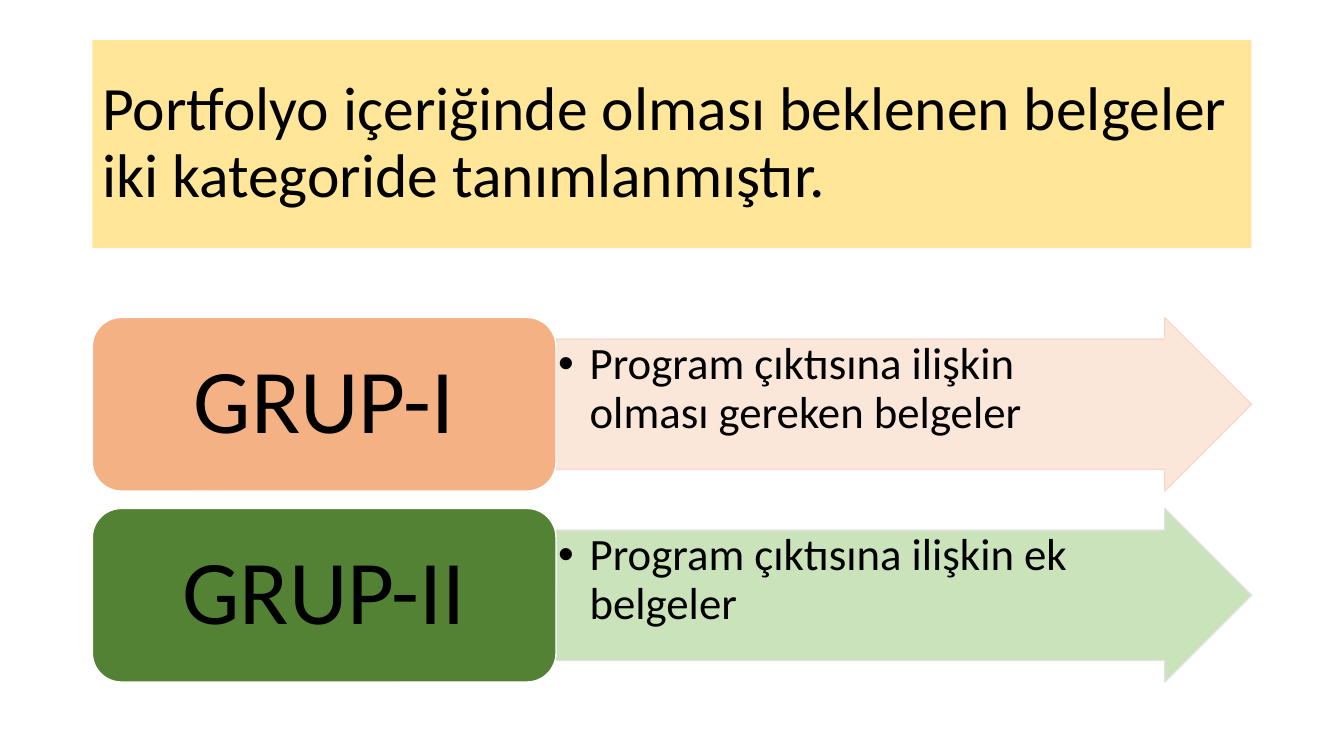
"""Build a slide that presents the two categories of portfolio documents."""
from lxml import etree
from pptx import Presentation
from pptx import util as u
from pptx.dml.color import RGBColor
from pptx.enum import shapes, text
from pptx.oxml.ns import qn

COLORS = {
    "text": "000000", "title": "FFE699", "outline": "FFFFFF",
    "orange": "F4B183", "orange_pale": "FBE5D6", "orange_line": "F8D7CE",
    "green": "548235", "green_pale": "C5E0B4", "green_line": "E1E1E1",
}
LEFT, WIDTH = 66, 828
LABEL_WIDTH = WIDTH * 0.4
ROW_TOP, ROW_HEIGHT = 226.8, 124
ROW_PITCH = ROW_HEIGHT * 1.1
GROUPS = [
    ("GRUP-I", "Program çıktısına ilişkin olması gereken belgeler", "orange"),
    ("GRUP-II", "Program çıktısına ilişkin ek belgeler", "green"),
]


def add_box(kind, box, fill, line, wording, size, insets):
    """Add a filled shape with left-aligned text and return it."""
    shape = slide.shapes.add_shape(kind, *[u.Pt(length) for length in box])
    shape.shadow.inherit = False
    shape.fill.solid()
    shape.fill.fore_color.rgb = RGBColor.from_string(COLORS[fill])
    if line:
        shape.line.color.rgb = RGBColor.from_string(COLORS[line])
        shape.line.width = u.Pt(1)
    else:
        shape.line.fill.background()
    frame = shape.text_frame
    frame.word_wrap = True
    frame.vertical_anchor = text.MSO_ANCHOR.MIDDLE
    frame.margin_left, frame.margin_top, frame.margin_right, frame.margin_bottom = [
        u.Pt(inset) for inset in insets]
    frame.text = wording
    paragraph = frame.paragraphs[0]
    paragraph.alignment = text.PP_ALIGN.LEFT
    paragraph.line_spacing = 0.9
    font = paragraph.runs[0].font
    font.name = "Calibri"
    font.size = u.Pt(size)
    font.color.rgb = RGBColor.from_string(COLORS["text"])
    return shape


presentation = Presentation()
presentation.slide_width, presentation.slide_height = u.Pt(960), u.Pt(540)
slide = presentation.slides.add_slide(presentation.slide_layouts[6])

add_box(shapes.MSO_SHAPE.RECTANGLE, (LEFT, 28.75, WIDTH, 148.5), "title", None,
        "Portfolyo içeriğinde olması beklenen belgeler iki kategoride tanımlanmıştır.",
        44, (7.2, 3.6, 7.2, 3.6))

for row, (label, description, color) in enumerate(GROUPS):
    top = ROW_TOP + row * ROW_PITCH

    arrow = add_box(shapes.MSO_SHAPE.RIGHT_ARROW,
                    (LEFT + LABEL_WIDTH, top, WIDTH - LABEL_WIDTH, ROW_HEIGHT),
                    f"{color}_pale", f"{color}_line", description, 32, (1.5, 1.5, 32, 1.5))
    arrow.adjustments[0], arrow.adjustments[1] = 0.75, 0.5
    arrow.text_frame.vertical_anchor = text.MSO_ANCHOR.TOP
    for solid_color in arrow.element.spPr.iter(qn("a:srgbClr")):
        etree.SubElement(solid_color, qn("a:alpha"), val="90000")
    properties = arrow.text_frame.paragraphs[0]._p.get_or_add_pPr()
    properties.set("marL", str(u.Pt(22.5)))
    properties.set("indent", str(u.Pt(-22.5)))
    etree.SubElement(properties, qn("a:buFont"), typeface="Arial")
    etree.SubElement(properties, qn("a:buChar"), char="•")

    label_box = add_box(shapes.MSO_SHAPE.ROUNDED_RECTANGLE,
                        (LEFT, top, LABEL_WIDTH, ROW_HEIGHT),
                        color, "outline", label, 65, (19.5, 9.75, 19.5, 9.75))
    label_box.text_frame.paragraphs[0].alignment = text.PP_ALIGN.CENTER

presentation.save("out.pptx")
